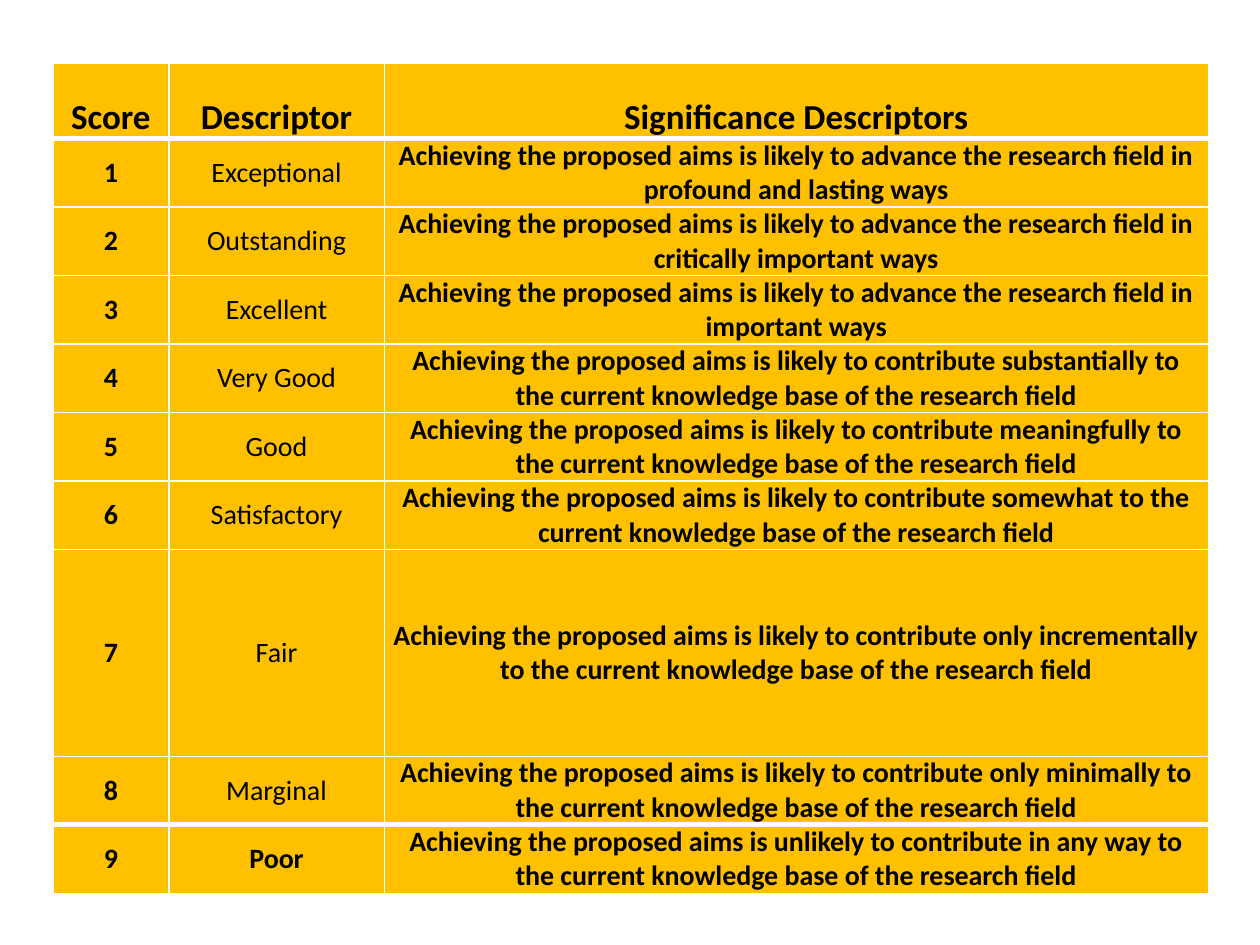
"""Build a slide with a table of significance scores and their descriptors."""
from lxml.etree import SubElement
from pptx import Presentation
from pptx.dml.color import RGBColor
from pptx.enum.text import MSO_ANCHOR as Anchor, PP_ALIGN as Align
from pptx.oxml.ns import qn
from pptx.util import Inches, Pt

COLORS = {"fill": "FFC000", "border": "FFFFFF", "text": "000000"}
FONT = "Calibri"
COLUMN_WIDTHS = [0.92, 1.71, 6.54]
HEADER_HEIGHT, ROW_HEIGHT, TALL_ROW_HEIGHT = 0.6, 0.54, 1.64
TALL_ROW = 7
AIMS = "Achieving the proposed aims is"
ADVANCE = f"{AIMS} likely to advance the research field in"
CONTRIBUTE = f"{AIMS} likely to contribute"
KNOWLEDGE = "to the current knowledge base of the research field"
DESCRIPTORS = [
    ("Exceptional", f"{ADVANCE} profound and lasting ways"),
    ("Outstanding", f"{ADVANCE} critically important ways"),
    ("Excellent", f"{ADVANCE} important ways"),
    ("Very Good", f"{CONTRIBUTE} substantially {KNOWLEDGE}"),
    ("Good", f"{CONTRIBUTE} meaningfully {KNOWLEDGE}"),
    ("Satisfactory", f"{CONTRIBUTE} somewhat {KNOWLEDGE}"),
    ("Fair", f"{CONTRIBUTE} only incrementally {KNOWLEDGE}"),
    ("Marginal", f"{CONTRIBUTE} only minimally {KNOWLEDGE}"),
    ("Poor", f"{AIMS} unlikely to contribute in any way {KNOWLEDGE}"),
]
ROWS = [("Score", "Descriptor", "Significance Descriptors")]
ROWS += [(str(score), *words) for score, words in enumerate(DESCRIPTORS, 1)]
LAST_ROW = len(ROWS) - 1


def add_borders(cell, top, bottom):
    properties = cell._tc.get_or_add_tcPr()
    for side, width in (("L", 1), ("R", 1), ("T", top), ("B", bottom)):
        line = SubElement(properties, qn(f"a:ln{side}"), w=str(Pt(width)))
        solid = SubElement(line, qn("a:solidFill"))
        SubElement(solid, qn("a:srgbClr"), val=COLORS["border"])


presentation = Presentation()
presentation.slide_width, presentation.slide_height = Inches(10), Inches(7.5)
slide = presentation.slides.add_slide(presentation.slide_layouts[6])

heights = [HEADER_HEIGHT] + [ROW_HEIGHT] * LAST_ROW
heights[TALL_ROW] = TALL_ROW_HEIGHT
table = slide.shapes.add_table(
    len(ROWS), len(COLUMN_WIDTHS), Inches(0.42), Inches(0.5),
    Inches(sum(COLUMN_WIDTHS)), Inches(sum(heights)),
).table
table.horz_banding = False
for column, width in zip(table.columns, COLUMN_WIDTHS):
    column.width = Inches(width)

for row_index, texts in enumerate(ROWS):
    table.rows[row_index].height = Inches(heights[row_index])
    is_header = row_index == 0
    for column_index, text in enumerate(texts):
        cell = table.cell(row_index, column_index)
        add_borders(
            cell,
            top=3 if row_index in (1, LAST_ROW) else 1,
            bottom=3 if row_index in (0, LAST_ROW - 1) else 1,
        )
        cell.fill.solid()
        cell.fill.fore_color.rgb = RGBColor.from_string(COLORS["fill"])
        cell.margin_left = cell.margin_right = Inches(0.07)
        cell.margin_top = cell.margin_bottom = Inches(0)
        cell.vertical_anchor = Anchor.BOTTOM if is_header else Anchor.MIDDLE
        cell.text_frame.text = text
        paragraph = cell.text_frame.paragraphs[0]
        paragraph.alignment = Align.CENTER
        font = paragraph.runs[0].font
        font.name = FONT
        font.size = Pt(20 if is_header else 16)
        font.bold = column_index != 1 or row_index in (0, LAST_ROW)
        font.color.rgb = RGBColor.from_string(COLORS["text"])

presentation.save("out.pptx")
